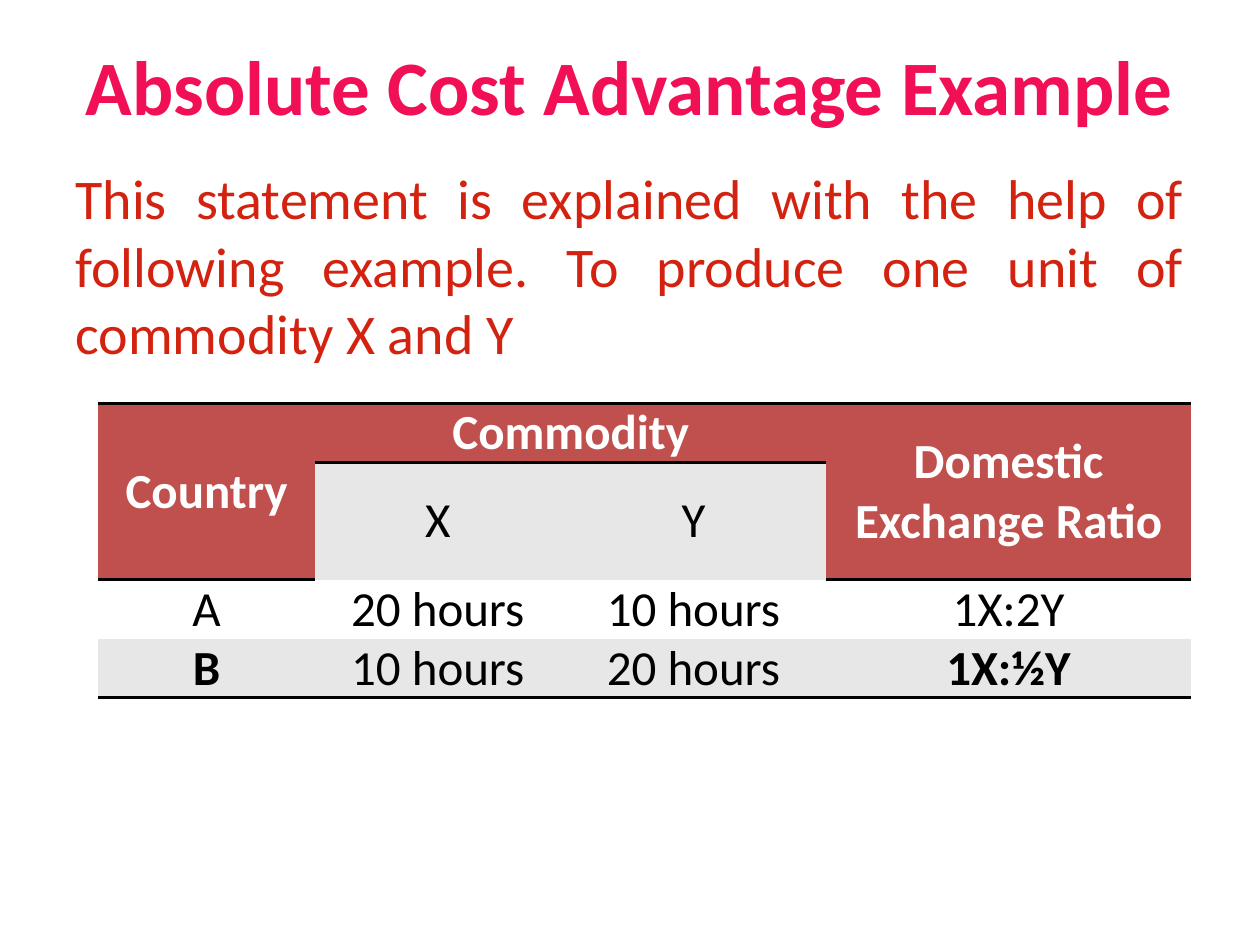
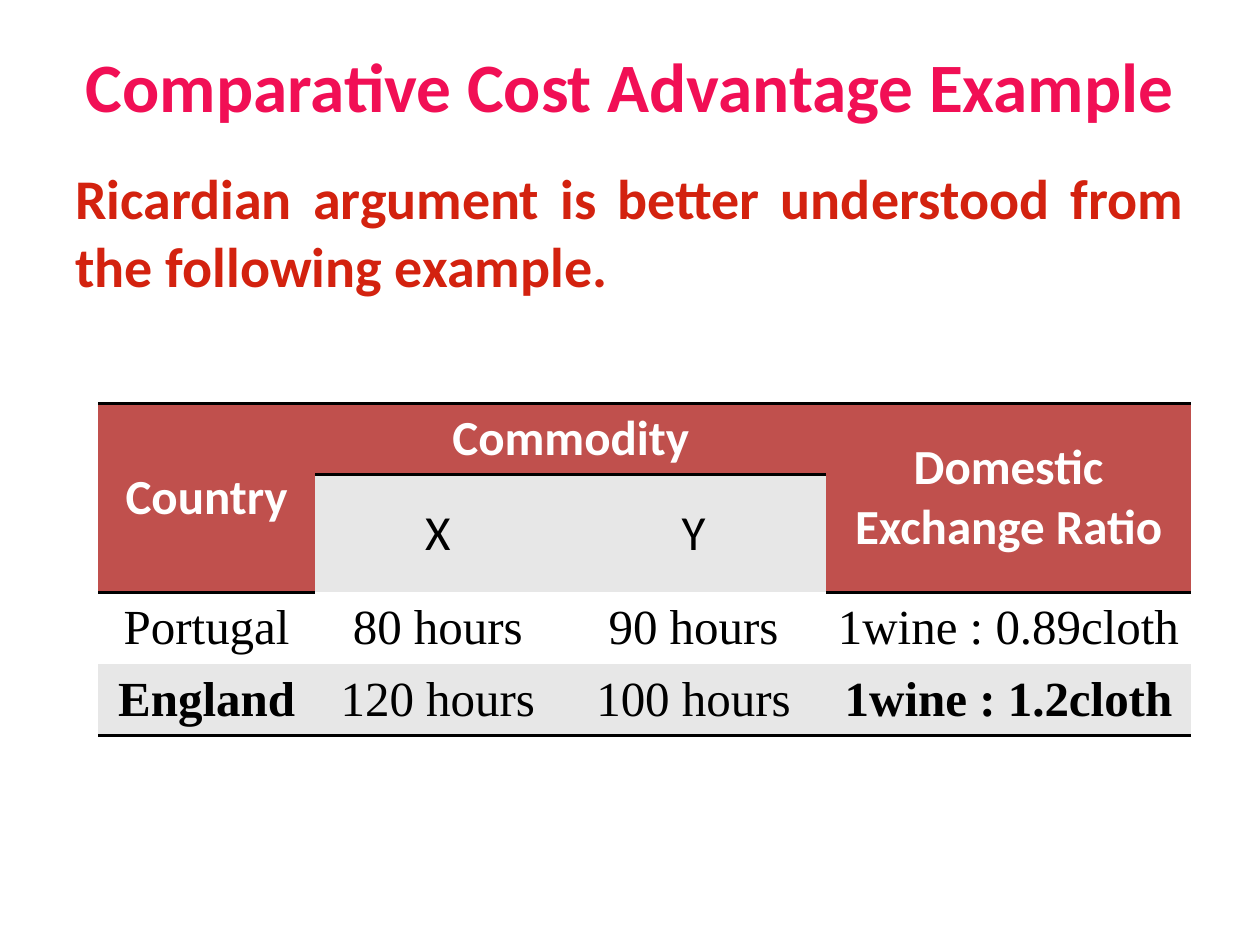
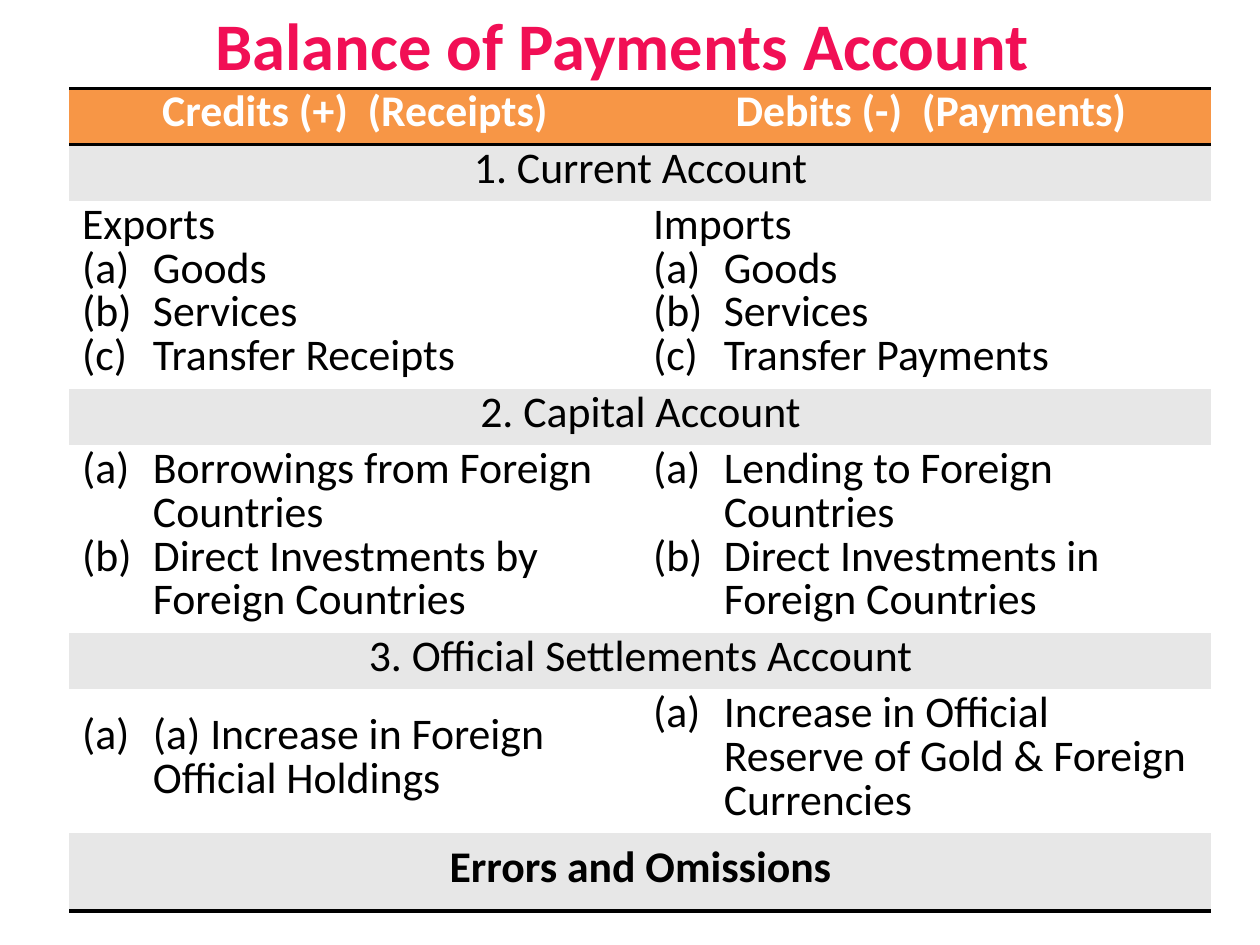
from dataclasses import dataclass

from lxml import etree
from pptx import Presentation, util as u
from pptx.dml.color import RGBColor
from pptx.enum import text
from pptx.oxml.ns import qn


@dataclass(frozen=True)
class Theme:
    font: str = "Calibri"
    serif: str = "Times New Roman"
    title: str = "F10F55"
    body: str = "D3220F"
    white: str = "FFFFFF"
    black: str = "000000"
    band: str = "E7E7E7"
    cost_header: str = "C0504D"
    account_header: str = "F79646"
    body_size: float = 32
    cost_size: float = 28
    account_size: float = 25
    rule_width: float = 2


THEME = Theme()
NO_TABLE_STYLE = "{2D5ABB26-0587-4C30-8999-92F81FD0307C}"
LEFT, WIDTH = 1.27, 22.86
LIST_INDENT = 1.43
CENTER = text.PP_ALIGN.CENTER


def style_font(para, size, color, bold=False, name=THEME.font):
    font = para.font
    font.name, font.size, font.bold = name, u.Pt(size), bold
    font.color.rgb = RGBColor.from_string(color)


def add_text(page, words, top, height, align, anchor):
    box = page.shapes.add_textbox(u.Cm(LEFT), u.Cm(top), u.Cm(WIDTH), u.Cm(height))
    frame = box.text_frame
    frame.word_wrap = True
    frame.vertical_anchor = anchor
    para = frame.paragraphs[0]
    para.text = words
    para.alignment = align
    return para


def add_title(page, words, size, top=0.41, height=2.59):
    para = add_text(page, words, top, height, CENTER, text.MSO_ANCHOR.MIDDLE)
    style_font(para, size, THEME.title, True)


def add_body(page, words, bold):
    para = add_text(page, words, 3.18, 14.3, text.PP_ALIGN.JUSTIFY, text.MSO_ANCHOR.TOP)
    style_font(para, THEME.body_size, THEME.body, bold)


def add_grid(page, left, top, widths, heights):
    frame = page.shapes.add_table(
        len(heights), len(widths), u.Cm(left), u.Cm(top),
        u.Cm(sum(widths)), u.Cm(sum(heights)))
    table = frame.table
    table.first_row = table.horz_banding = False
    frame.element.find(".//" + qn("a:tableStyleId")).text = NO_TABLE_STYLE
    for column, width in zip(table.columns, widths):
        column.width = u.Cm(width)
    for row, height in zip(table.rows, heights):
        row.height = u.Cm(height)
    return table


def paint_cell(cell, fill, rules=""):
    properties = cell._tc.get_or_add_tcPr()
    for side in rules:
        line = etree.SubElement(properties, qn(f"a:ln{side}"), w=str(u.Pt(THEME.rule_width)))
        solid = etree.SubElement(line, qn("a:solidFill"))
        etree.SubElement(solid, qn("a:srgbClr"), val=THEME.black)
    cell.fill.solid()
    cell.fill.fore_color.rgb = RGBColor.from_string(fill)
    cell.vertical_anchor = text.MSO_ANCHOR.MIDDLE


def letter_paragraph(para):
    properties = para._p.get_or_add_pPr()
    properties.set("marL", str(u.Cm(LIST_INDENT)))
    properties.set("indent", str(-u.Cm(LIST_INDENT)))
    etree.SubElement(properties, qn("a:buAutoNum"), type="alphaLcParenBoth")


def add_cost_table(page, rows, row_height, data_font):
    table = add_grid(page, 1.98, 8.13, [4.37, 4.95, 5.36, 7.34], [row_height] * 4)
    header = ["Country", "Commodity", "", "Domestic Exchange Ratio"]
    grid = [header, ["", "X", "Y", ""], *rows]
    last = len(grid) - 1
    for start, end in [((0, 0), (1, 0)), ((0, 1), (0, 2)), ((0, 3), (1, 3))]:
        table.cell(*start).merge(table.cell(*end))
    for r, values in enumerate(grid):
        for c, words in enumerate(values):
            cell = table.cell(r, c)
            outer = c in (0, 3)
            heading = r == 0 or (r == 1 and outer)
            if heading:
                paint_cell(cell, THEME.cost_header, "TB" if r == 0 else "B")
            else:
                paint_cell(cell, THEME.band if r in (1, last) else THEME.white,
                           "B" if r == last else "")
            cell.margin_left = cell.margin_right = u.Cm(0.18)
            cell.margin_top = cell.margin_bottom = 0
            if words:
                para = cell.text_frame.paragraphs[0]
                para.text = words
                para.alignment = CENTER
                style_font(para, THEME.cost_size,
                           THEME.white if heading else THEME.black,
                           heading or (r == last and outer),
                           data_font if r > 1 else THEME.font)


def write_account_cell(cell, lines, color, bold=False, align=None, lettered_from=None):
    frame = cell.text_frame
    for index, words in enumerate(lines):
        para = frame.paragraphs[0] if index == 0 else frame.add_paragraph()
        para.text = words
        para.alignment = align
        para.line_spacing = u.Pt(THEME.account_size)
        if lettered_from is not None and index >= lettered_from:
            letter_paragraph(para)
        style_font(para, THEME.account_size, color, bold)


def add_account_table(page, headings, sections, closing):
    heights = [1.12]
    for section in sections:
        heights += [1.12, section["height"]]
    heights.append(1.57)
    table = add_grid(page, 1.4, 1.78, [11.51, 11.51], heights)

    def add_band(r, words, bold=False, rules=""):
        table.cell(r, 0).merge(table.cell(r, 1))
        for c in range(2):
            paint_cell(table.cell(r, c), THEME.band, rules)
        write_account_cell(table.cell(r, 0), [words], THEME.black, bold, CENTER)

    for c, words in enumerate(headings):
        paint_cell(table.cell(0, c), THEME.account_header, "TB")
        write_account_cell(table.cell(0, c), [words], THEME.white, True, CENTER)
    for number, section in enumerate(sections):
        r = 1 + 2 * number
        add_band(r, f"{number + 1}. {section['name']}")
        for c, lines in enumerate(section["sides"]):
            cell = table.cell(r + 1, c)
            paint_cell(cell, THEME.white)
            write_account_cell(cell, lines, THEME.black, lettered_from=section["lead"])
    add_band(len(heights) - 1, closing, True, "B")


def main():
    deck = Presentation()
    deck.slide_width, deck.slide_height = u.Cm(25.4), u.Cm(19.05)
    absolute, comparative, balance = [
        deck.slides.add_slide(deck.slide_layouts[6]) for _ in range(3)]

    add_title(absolute, "Absolute Cost Advantage Example", 44)
    add_body(absolute, "This statement is explained with the help of following example. "
                       "To produce one unit of commodity X and Y ", False)
    add_cost_table(absolute, [["A", "20 hours", "10 hours", "1X:2Y"],
                              ["B", "10 hours", "20 hours", "1X:½Y"]], 1.04, THEME.font)

    add_title(comparative, "Comparative Cost Advantage Example", 39.6)
    add_body(comparative, "Ricardian argument is better understood from "
                          "the following example.", True)
    add_cost_table(comparative,
                   [["Portugal", "80 hours", "90 hours", "1wine : 0.89cloth"],
                    ["England", "120 hours", "100 hours", "1wine : 1.2cloth"]],
                   1.44, THEME.serif)

    add_title(balance, "Balance of Payments Account ", 38, 0, 1.78)
    sections = [
        {"name": "Current Account", "height": 3.71, "lead": 1, "sides": [
            ["Exports", "Goods", "Services", "Transfer Receipts"],
            ["Imports", "Goods", "Services", "Transfer Payments"]]},
        {"name": "Capital Account", "height": 3.71, "lead": 0, "sides": [
            ["Borrowings from Foreign Countries", "Direct Investments by Foreign Countries"],
            ["Lending to Foreign Countries", "Direct Investments in Foreign Countries"]]},
        {"name": "Official Settlements Account", "height": 2.84, "lead": 0, "sides": [
            ["(a) Increase in Foreign Official Holdings"],
            ["Increase in Official Reserve of Gold & Foreign Currencies"]]},
    ]
    add_account_table(balance, ["Credits (+)  (Receipts)", " Debits (-)  (Payments)"],
                      sections, "Errors and Omissions")
    deck.save("out.pptx")


if __name__ == "__main__":
    main()
